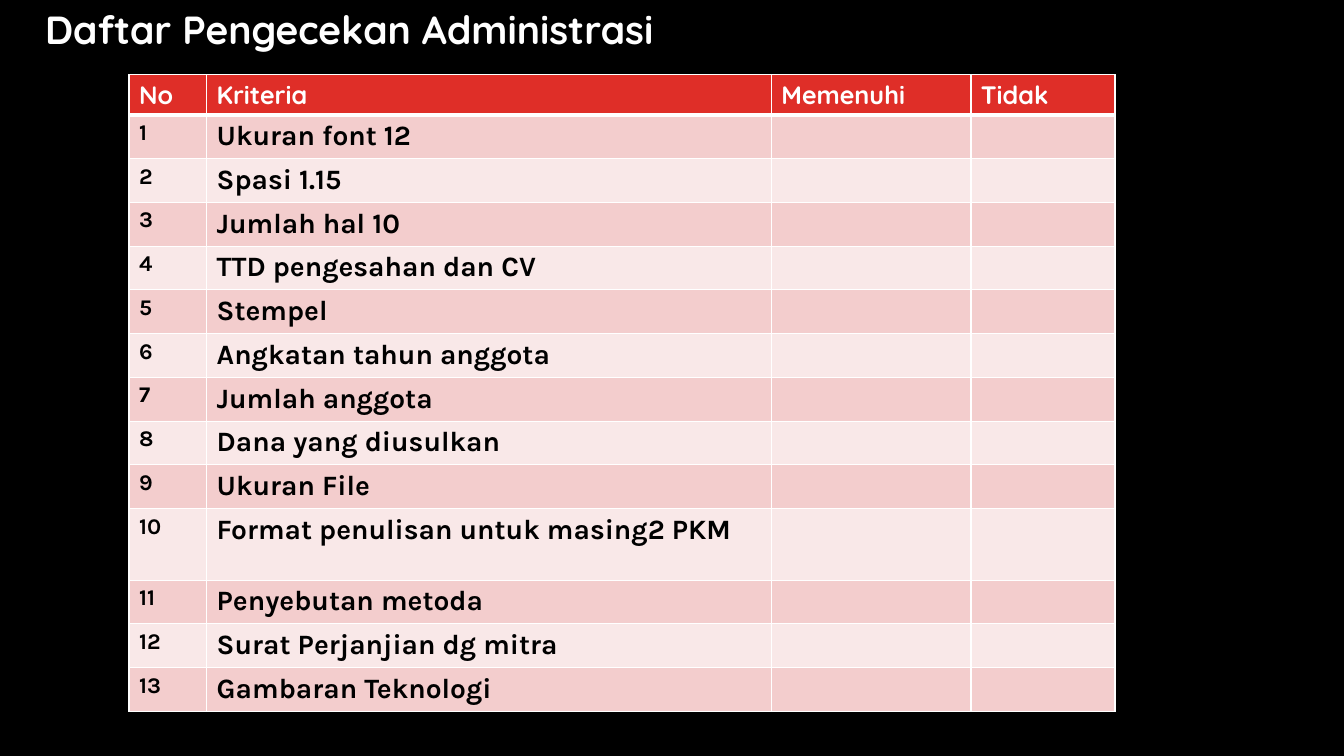
import pptx
import pptx.dml.color
import pptx.enum.text
import pptx.oxml
import pptx.oxml.ns
import pptx.util

Inches = pptx.util.Inches
Pt = pptx.util.Pt
RGBColor = pptx.dml.color.RGBColor

TITLE = "Daftar Pengecekan Administrasi"
HEADERS = ["No", "Kriteria", "Memenuhi", "Tidak"]
CRITERIA = [
    "Ukuran font 12",
    "Spasi 1.15",
    "Jumlah hal 10",
    "TTD pengesahan dan CV",
    "Stempel",
    "Angkatan tahun anggota",
    "Jumlah anggota",
    "Dana yang diusulkan",
    "Ukuran File",
    "Format penulisan untuk masing2 PKM",
    "Penyebutan metoda",
    "Surat Perjanjian dg mitra",
    "Gambaran Teknologi",
]
COLUMN_WIDTHS = [0.77, 5.6, 1.98, 1.43]
HEADER_HEIGHT, ROW_HEIGHT, TALL_HEIGHT = 0.4, 0.434, 0.71
TALL_ROW = 10

BLACK = RGBColor(0x00, 0x00, 0x00)
WHITE = RGBColor(0xFF, 0xFF, 0xFF)
RED = RGBColor(0xDF, 0x2E, 0x28)
PINK = RGBColor(0xF3, 0xCD, 0xCD)
PALE_PINK = RGBColor(0xF9, 0xE8, 0xE8)

TITLE_FONT = {"name": "Quicksand", "size": Pt(28), "bold": True}
HEADER_FONT = {"name": "Quicksand", "size": Pt(18), "bold": True}
NUMBER_FONT = {"name": "Karla", "size": Pt(16), "bold": True}
CRITERION_FONT = {"name": "Karla", "size": Pt(20), "bold": True}


def write_text(text_frame, text, font_values, color):
    paragraph = text_frame.paragraphs[0]
    run = paragraph.add_run()
    run.text = text
    for name, value in font_values.items():
        setattr(run.font, name, value)
    run.font.color.rgb = color


def add_borders(cell, widths):
    properties = cell._tc.get_or_add_tcPr()
    for position, (side, width) in enumerate(widths.items()):
        border = pptx.oxml.parse_xml(
            f'<a:ln{side} {pptx.oxml.ns.nsdecls("a")} w="{Pt(width)}">'
            f'<a:solidFill><a:srgbClr val="{WHITE}"/></a:solidFill></a:ln{side}>'
        )
        properties.insert(position, border)


presentation = pptx.Presentation()
presentation.slide_width = Inches(13.33)
presentation.slide_height = Inches(7.5)
slide = presentation.slides.add_slide(presentation.slide_layouts[6])
slide.background.fill.solid()
slide.background.fill.fore_color.rgb = BLACK

title_box = slide.shapes.add_textbox(Inches(0.35), Inches(0), Inches(6.3), Inches(0.57))
title_box.text_frame.word_wrap = False
title_box.text_frame.auto_size = pptx.enum.text.MSO_AUTO_SIZE.SHAPE_TO_FIT_TEXT
write_text(title_box.text_frame, TITLE, TITLE_FONT, WHITE)

rows = [HEADERS] + [
    [str(number), criterion, "", ""] for number, criterion in enumerate(CRITERIA, 1)
]
heights = [HEADER_HEIGHT] + [ROW_HEIGHT] * len(CRITERIA)
heights[TALL_ROW] = TALL_HEIGHT

table = slide.shapes.add_table(
    len(rows), len(HEADERS), Inches(1.28), Inches(0.74),
    Inches(sum(COLUMN_WIDTHS)), Inches(sum(heights)),
).table
for column, width in zip(table.columns, COLUMN_WIDTHS):
    column.width = Inches(width)

for row_index, (texts, height) in enumerate(zip(rows, heights)):
    table.rows[row_index].height = Inches(height)
    is_header = row_index == 0
    fill_color = RED if is_header else PINK if row_index % 2 else PALE_PINK
    widths = {"L": 1, "R": 1, "T": 3 if row_index == 1 else 1, "B": 3 if is_header else 1}
    for column_index, text in enumerate(texts):
        cell = table.cell(row_index, column_index)
        cell.fill.solid()
        cell.fill.fore_color.rgb = fill_color
        add_borders(cell, widths)
        if is_header:
            write_text(cell.text_frame, text, HEADER_FONT, WHITE)
        elif text:
            body_font = NUMBER_FONT if column_index == 0 else CRITERION_FONT
            write_text(cell.text_frame, text, body_font, BLACK)

presentation.save("out.pptx")
